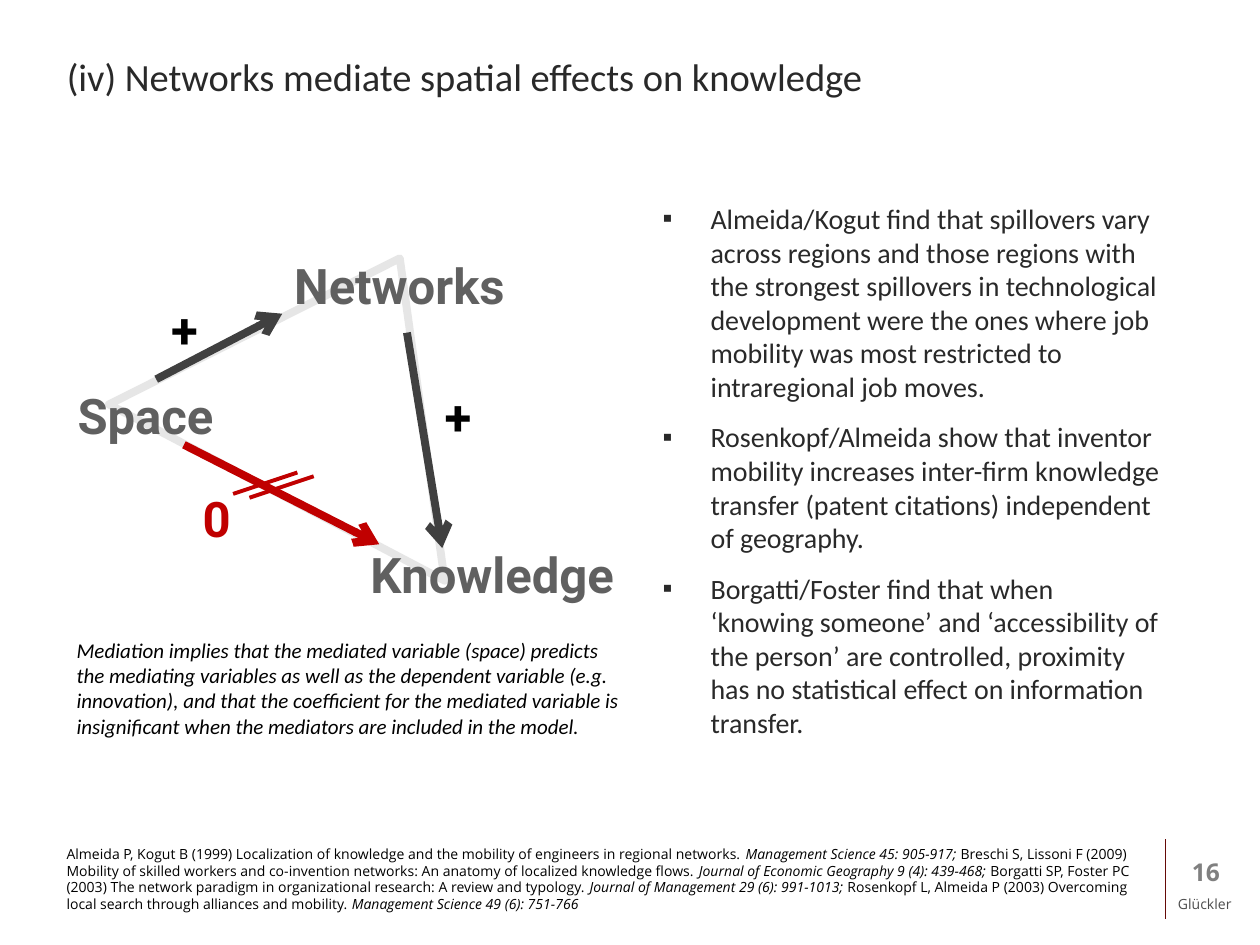
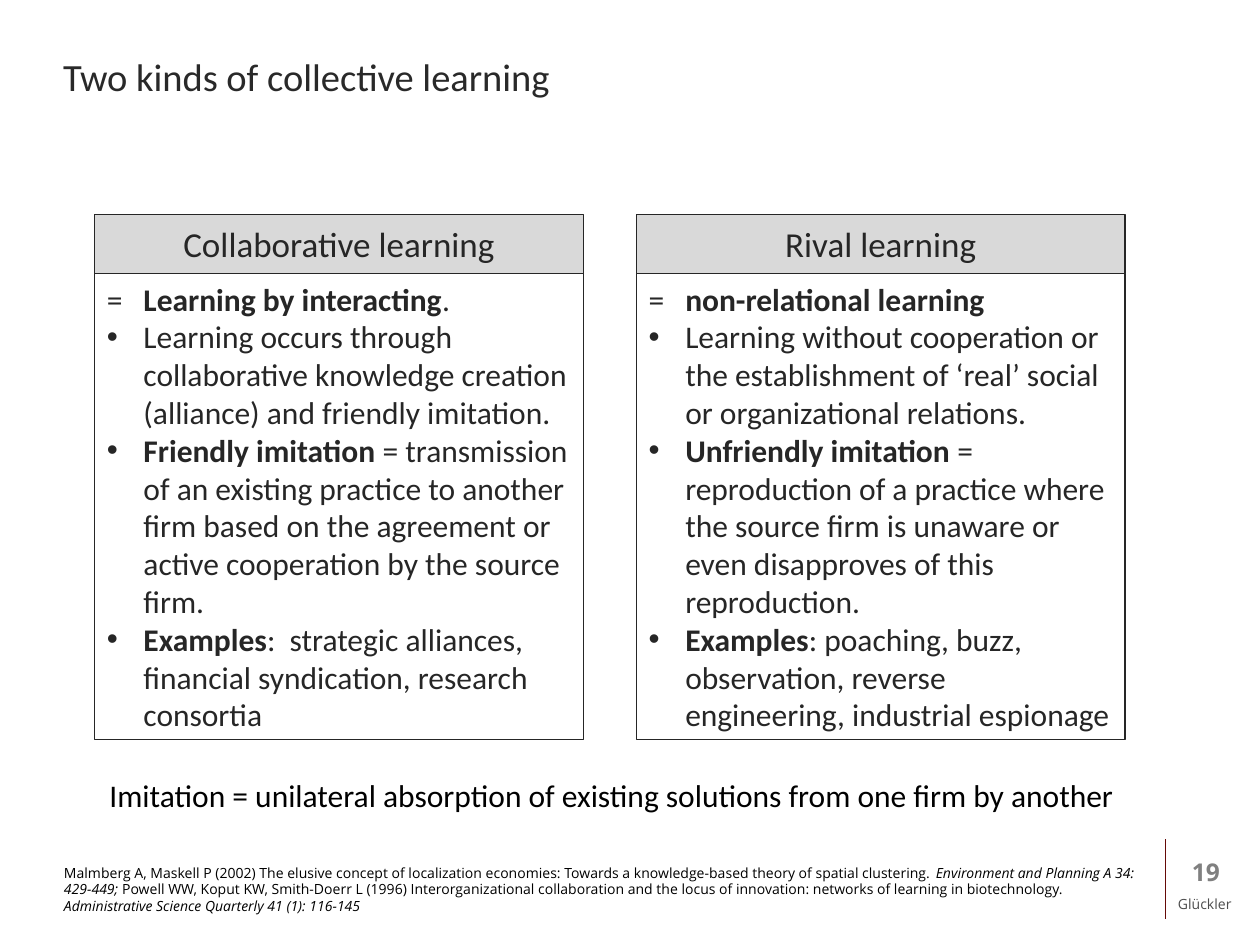
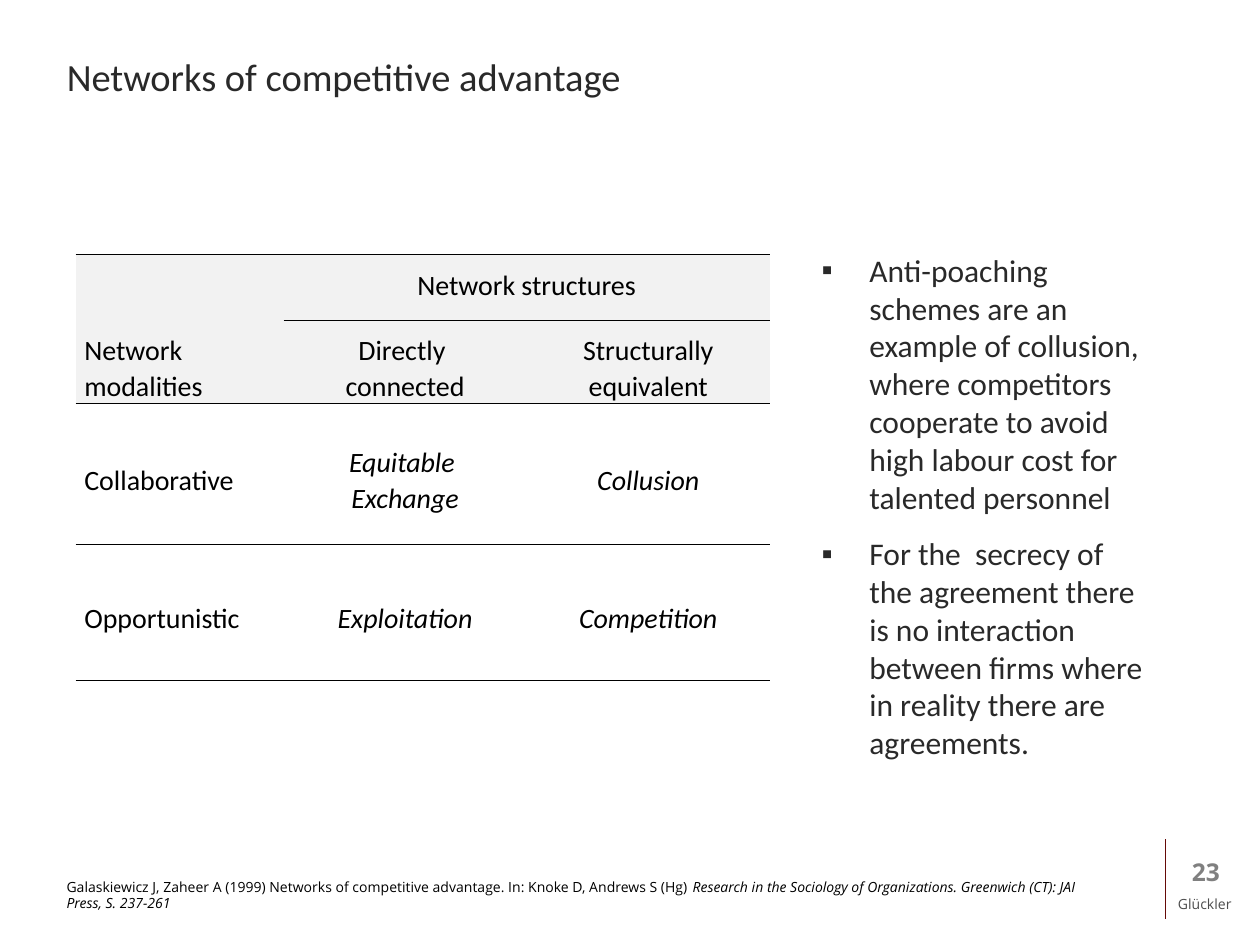
from lxml import etree
from pptx import Presentation
from pptx.dml.color import RGBColor
from pptx.enum.shapes import MSO_CONNECTOR, MSO_SHAPE
from pptx.enum.text import MSO_ANCHOR, MSO_AUTO_SIZE, PP_ALIGN
from pptx.oxml.ns import qn
from pptx.util import Inches, Pt

STRAIGHT = MSO_CONNECTOR.STRAIGHT
RECTANGLE = MSO_SHAPE.RECTANGLE
TRIANGLE = MSO_SHAPE.ISOSCELES_TRIANGLE
LEFT, CENTER, RIGHT = PP_ALIGN.LEFT, PP_ALIGN.CENTER, PP_ALIGN.RIGHT
TOP, MIDDLE = MSO_ANCHOR.TOP, MSO_ANCHOR.MIDDLE
NO_FIT = MSO_AUTO_SIZE.NONE

WHITE = RGBColor(0xFF, 0xFF, 0xFF)
BLACK = RGBColor(0x00, 0x00, 0x00)
INK = RGBColor(0x29, 0x29, 0x29)
BOX_INK = RGBColor(0x26, 0x26, 0x26)
MAROON = RGBColor(0x65, 0x09, 0x07)
AUTHOR_GRAY = RGBColor(0x4D, 0x4D, 0x4D)
NUMBER_GRAY = RGBColor(0x80, 0x80, 0x80)
LABEL_GRAY = RGBColor(0x60, 0x60, 0x60)
TRIANGLE_GRAY = RGBColor(0xE6, 0xE6, 0xE6)
ARROW_GRAY = RGBColor(0x40, 0x40, 0x40)
HEADER_GRAY = RGBColor(0xD9, 0xD9, 0xD9)
TABLE_GRAY = RGBColor(0xF2, 0xF2, 0xF2)
RED = RGBColor(0xC0, 0x00, 0x00)

BODY_FONT, NOTE_FONT, LABEL_FONT = "Calibri", "Open Sans", "Roboto"
PLAIN, BOLD, ITALIC = "plain", "bold", "italic"
TITLE_ONLY, TITLE_AND_BODY = 5, 1
NO_TABLE_STYLE = "{2D5ABB26-0587-4C30-8999-92F81FD0307C}"


def write_runs(paragraph, runs, size, color, font=BODY_FONT):
    """Add (text, style) runs to a paragraph, breaking lines at newlines."""
    for text, style in runs:
        for index, line in enumerate(text.split("\n")):
            if index:
                paragraph.add_line_break()
            run = paragraph.add_run()
            run.text = line
            run.font.name = font
            run.font.size = Pt(size)
            run.font.color.rgb = color
            run.font.bold = style == BOLD
            run.font.italic = style == ITALIC


def place(shape, box):
    """Move and size a shape to a (left, top, width, height) box in inches."""
    shape.left, shape.top, shape.width, shape.height = map(Inches, box)


def add_bullet(paragraph, character, indent):
    """Give a paragraph a bullet character with a hanging indent."""
    properties = paragraph._p.get_or_add_pPr()
    properties.set("marL", str(Inches(indent)))
    properties.set("indent", str(-Inches(indent)))
    etree.SubElement(properties, qn("a:buFont"), typeface="Arial")
    etree.SubElement(properties, qn("a:buChar"), char=character)


def add_tab_stop(paragraph, position):
    """Add one left tab stop to a paragraph."""
    tabs = etree.SubElement(paragraph._p.get_or_add_pPr(), qn("a:tabLst"))
    etree.SubElement(tabs, qn("a:tab"), pos=str(Inches(position)), algn="l")


def add_text(slide, box, runs, size, color, font=BODY_FONT, align=LEFT, wrap=True):
    """Add a one-paragraph text box."""
    text_box = slide.shapes.add_textbox(*map(Inches, box))
    text_box.text_frame.word_wrap = wrap
    paragraph = text_box.text_frame.paragraphs[0]
    paragraph.alignment = align
    write_runs(paragraph, runs, size, color, font)


def add_line(slide, start, end, color, width, arrow=False):
    """Add a straight line, with an open arrowhead at its end if asked."""
    line = slide.shapes.add_connector(STRAIGHT, *map(Inches, start + end))
    line.line.color.rgb = color
    line.line.width = Pt(width)
    properties = line._element.spPr
    if arrow:
        etree.SubElement(properties.get_or_add_ln(), qn("a:tailEnd"), type="arrow")
    etree.SubElement(properties, qn("a:effectLst"))


def add_outline_shape(slide, kind, box, line_color, line_width, fill=None):
    """Add a shape with an outline and an optional fill."""
    shape = slide.shapes.add_shape(kind, *map(Inches, box))
    shape.shadow.inherit = False
    shape.line.color.rgb = line_color
    shape.line.width = Pt(line_width)
    if fill is None:
        shape.fill.background()
    else:
        shape.fill.solid()
        shape.fill.fore_color.rgb = fill
    return shape


def add_slide(presentation, layout, title, title_left, number):
    """Add a slide with its title, footer rule, author and number."""
    slide = presentation.slides.add_slide(presentation.slide_layouts[layout])
    placeholder = slide.shapes.title
    place(placeholder, (title_left, 0.13, 7.32, 0.95))
    placeholder.fill.solid()
    placeholder.fill.fore_color.rgb = WHITE
    frame = placeholder.text_frame
    frame.auto_size = NO_FIT
    frame.vertical_anchor = MIDDLE
    frame.paragraphs[0].alignment = LEFT
    write_runs(frame.paragraphs[0], [(title, PLAIN)], 22, INK)
    add_line(slide, (9.25, 6.66), (9.25, 7.29), MAROON, 1)
    add_text(slide, (9.25, 7.06, 0.65, 0.24), [("Glückler", PLAIN)], 8,
             AUTHOR_GRAY, NOTE_FONT, wrap=False)
    add_text(slide, (9.17, 6.75, 0.61, 0.33), [(number, BOLD)], 14,
             NUMBER_GRAY, NOTE_FONT, RIGHT)
    return slide


def add_references(slide, box, runs):
    """Add the small reference note at the foot of a slide."""
    add_text(slide, box, runs, 8, BLACK, NOTE_FONT)


def fill_body(slide, box, items, size):
    """Fill the body placeholder with square-bulleted items."""
    body = slide.placeholders[1]
    place(body, box)
    frame = body.text_frame
    frame.auto_size = NO_FIT
    for index, item in enumerate(items):
        paragraph = frame.add_paragraph() if index else frame.paragraphs[0]
        add_bullet(paragraph, "▪", 0.38)
        paragraph.space_before = Pt(0.4 * size if index else 0)
        paragraph.space_after = Pt(0.2 * size)
        write_runs(paragraph, [(item, PLAIN)], size, INK)


def add_learning_panel(slide, left, heading, definition, items):
    """Add a headed panel with a definition and bulleted items."""
    panel = add_outline_shape(slide, RECTANGLE, (left, 2.17, 3.88, 3.7), BOX_INK, 0.75)
    frame = panel.text_frame
    frame.word_wrap = True
    frame.vertical_anchor = TOP
    for index, runs in enumerate([definition] + items):
        paragraph = frame.add_paragraph() if index else frame.paragraphs[0]
        paragraph.alignment = LEFT
        if index:
            add_bullet(paragraph, "•", 0.29)
        else:
            add_tab_stop(paragraph, 0.29)
        write_runs(paragraph, runs, 18, BOX_INK)
    header = add_outline_shape(slide, RECTANGLE, (left, 1.7, 3.88, 0.47),
                               BOX_INK, 0.75, HEADER_GRAY)
    header.text_frame.vertical_anchor = MIDDLE
    header.text_frame.paragraphs[0].alignment = CENTER
    write_runs(header.text_frame.paragraphs[0], [(heading, PLAIN)], 20, BOX_INK)


def add_cell_border(cell, side):
    """Draw a thin black border on one side of a cell."""
    border = etree.SubElement(cell._tc.get_or_add_tcPr(), qn(f"a:{side}"),
                              w=str(Pt(0.5)))
    fill = etree.SubElement(border, qn("a:solidFill"))
    etree.SubElement(fill, qn("a:srgbClr"), val=str(BLACK))


def add_network_table(slide, rows):
    """Add the table of network modalities by network structures."""
    widths, heights = (1.65, 1.93, 1.93), (0.52, 0.65, 1.12, 1.08)
    frame = slide.shapes.add_table(len(heights), len(widths), Inches(0.6), Inches(2.02),
                                   Inches(sum(widths)), Inches(sum(heights)))
    table = frame.table
    table.first_row = table.horz_banding = False
    table._tbl.tblPr.find(qn("a:tableStyleId")).text = NO_TABLE_STYLE
    for column, width in zip(table.columns, widths):
        column.width = Inches(width)
    for row, height in zip(table.rows, heights):
        row.height = Inches(height)
    table.cell(0, 1).merge(table.cell(0, 2))
    for row_index, texts in enumerate(rows):
        is_header = row_index < 2
        for column_index, text in enumerate(texts):
            cell = table.cell(row_index, column_index)
            cell.margin_left = cell.margin_right = Inches(0.07)
            cell.margin_top, cell.margin_bottom = Inches(0.1), 0
            cell.vertical_anchor = TOP if is_header else MIDDLE
            if row_index == 0:
                add_cell_border(cell, "lnT")
            if row_index or column_index:
                add_cell_border(cell, "lnB")
            if is_header:
                cell.fill.solid()
                cell.fill.fore_color.rgb = TABLE_GRAY
            else:
                cell.fill.background()
            if text:
                paragraph = cell.text_frame.paragraphs[0]
                paragraph.alignment = CENTER if column_index else LEFT
                paragraph.line_spacing = 1.05
                paragraph.space_after = Pt(2)
                style = PLAIN if is_header or column_index == 0 else ITALIC
                write_runs(paragraph, [(text, style)], 16, BLACK)


def add_mediation_diagram(slide):
    """Draw the triangle of space, networks and knowledge."""
    triangle = add_outline_shape(slide, TRIANGLE, (1.18, 1.93, 3.01, 2.1),
                                 TRIANGLE_GRAY, 4.5)
    triangle.rotation = 27.7
    for label, box in (("Knowledge", (2.42, 4.27, 2.97, 0.58)),
                       ("Space", (0.19, 3.01, 1.93, 0.58)),
                       ("Networks", (1.79, 1.98, 2.76, 0.58))):
        add_text(slide, box, [(label, BOLD)], 28, LABEL_GRAY, LABEL_FONT, CENTER)
    for start, end, color in (((1.46, 3.53), (3.01, 4.32), RED),
                              ((1.24, 3.01), (2.24, 2.49), ARROW_GRAY),
                              ((3.23, 2.64), (3.51, 4.35), ARROW_GRAY)):
        add_line(slide, start, end, color, 4.5, arrow=True)
    for left, top in ((1.85, 3.92), (1.98, 3.95)):
        add_line(slide, (left, top), (left + 0.51, top - 0.17), RED, 2.25)
    for sign, left, top, color in (("0", 1.51, 3.83, RED), ("+", 1.26, 2.33, BLACK),
                                   ("+", 3.43, 3.02, BLACK)):
        add_text(slide, (left, top, 0.43, 0.57), [(sign, BOLD)], 28, color,
                 LABEL_FONT, wrap=False)


def build_mediation_slide(presentation):
    """Build the slide on networks mediating spatial effects."""
    slide = add_slide(presentation, TITLE_AND_BODY,
                      "(iv) Networks mediate spatial effects on knowledge", 0.43, "16")
    fill_body(slide, (5.16, 1.55, 4.17, 4.88), [
        "Almeida/Kogut find that spillovers vary across regions and those regions with "
        "the strongest spillovers in technological development were the ones where job "
        "mobility was most restricted to intraregional job moves.",
        "Rosenkopf/Almeida show that inventor mobility increases inter-firm knowledge "
        "transfer (patent citations) independent of geography.",
        "Borgatti/Foster find that when ‘knowing someone’ and ‘accessibility of the "
        "person’ are controlled, proximity has no statistical effect on information "
        "transfer.",
    ], 16)
    add_references(slide, (0.43, 6.66, 8.66, 0.64), [
        ("Almeida P, Kogut B (1999) Localization of knowledge and the mobility of "
         "engineers in regional networks. ", PLAIN),
        ("Management Science 45: 905-917; ", ITALIC),
        ("Breschi S, Lissoni F (2009) Mobility of skilled workers and co-invention "
         "networks: An anatomy of localized knowledge flows. ", PLAIN),
        ("Journal of Economic Geography 9 (4): 439-468; ", ITALIC),
        ("Borgatti SP, Foster PC (2003) The network paradigm in organizational "
         "research: A review and typology. ", PLAIN),
        ("Journal of Management 29 (6): 991-1013; ", ITALIC),
        ("Rosenkopf L, Almeida P (2003) Overcoming local search through alliances "
         "and mobility. ", PLAIN),
        ("Management Science 49 (6): 751-766", ITALIC),
    ])
    add_mediation_diagram(slide)
    add_text(slide, (0.51, 5.01, 4.57, 0.91), [
        ("Mediation implies that the mediated variable (space) predicts the mediating "
         "variables as well as the dependent variable (e.g. innovation), and that the "
         "coefficient for the mediated variable is insignificant when the mediators "
         "are included in the model.", ITALIC)], 12, BLACK)


def build_learning_slide(presentation):
    """Build the slide comparing collaborative and rival learning."""
    slide = add_slide(presentation, TITLE_ONLY, "Two kinds of collective learning",
                      0.4, "19")
    add_learning_panel(
        slide, 0.75, "Collaborative learning",
        [("= \t", PLAIN), ("Learning by interacting", BOLD), (".", PLAIN)],
        [[("Learning occurs through collaborative knowledge creation (alliance) and "
           "friendly imitation.", PLAIN)],
         [("Friendly imitation ", BOLD),
          ("= transmission of an existing practice to another firm based on the "
           "agreement or active cooperation by the source firm.", PLAIN)],
         [("Examples", BOLD),
          (":  strategic alliances, financial syndication, research consortia", PLAIN)]])
    add_learning_panel(
        slide, 5.05, "Rival learning",
        [("= \t", PLAIN), ("non-relational learning", BOLD)],
        [[("Learning without cooperation or the establishment of ‘real’ social or "
           "organizational relations.", PLAIN)],
         [("Unfriendly imitation ", BOLD),
          ("= reproduction of a practice where the source firm is unaware or even "
           "disapproves of this reproduction.", PLAIN)],
         [("Examples", BOLD),
          (": poaching, buzz, observation, reverse engineering, industrial espionage",
           PLAIN)]])
    add_references(slide, (0.41, 6.81, 8.74, 0.64), [
        ("Malmberg A, Maskell P (2002) The elusive concept of localization economies: "
         "Towards a knowledge-based theory of spatial clustering. ", PLAIN),
        ("Environment and Planning A 34: 429-449; ", ITALIC),
        ("Powell WW, Koput KW, Smith-Doerr L (1996) Interorganizational collaboration "
         "and the locus of innovation: networks of learning in biotechnology. ", PLAIN),
        ("Administrative Science Quarterly 41 (1): 116-145", ITALIC),
    ])
    add_text(slide, (0.77, 6.11, 8.32, 0.47), [
        ("Imitation = unilateral absorption of existing solutions from one firm by "
         "another", PLAIN)], 18, BLACK)


def build_advantage_slide(presentation):
    """Build the slide on networks of competitive advantage."""
    slide = add_slide(presentation, TITLE_AND_BODY, "Networks of competitive advantage",
                      0.43, "23")
    fill_body(slide, (6.42, 1.94, 2.83, 4.49), [
        "Anti-poaching schemes are an example of collusion, where competitors cooperate "
        "to avoid high labour cost for talented personnel",
        "For the  secrecy of the agreement there is no interaction between firms where "
        "in reality there are agreements.",
    ], 18)
    add_references(slide, (0.43, 6.92, 8.5, 0.37), [
        ("Galaskiewicz J, Zaheer A (1999) Networks of competitive advantage. In: "
         "Knoke D, Andrews S (Hg)", PLAIN),
        (" Research in the Sociology of Organizations. Greenwich (CT): JAI Press, "
         "S. 237-261", ITALIC),
    ])
    add_network_table(slide, [
        ("", "Network structures", ""),
        ("Network \nmodalities", "Directly \nconnected", "Structurally equivalent"),
        ("Collaborative", "Equitable \nExchange", "Collusion"),
        ("Opportunistic", "Exploitation", "Competition"),
    ])


def main():
    """Build and save the presentation."""
    presentation = Presentation()
    presentation.slide_width, presentation.slide_height = Inches(10), Inches(7.5)
    build_mediation_slide(presentation)
    build_learning_slide(presentation)
    build_advantage_slide(presentation)
    presentation.save("out.pptx")


if __name__ == "__main__":
    main()
